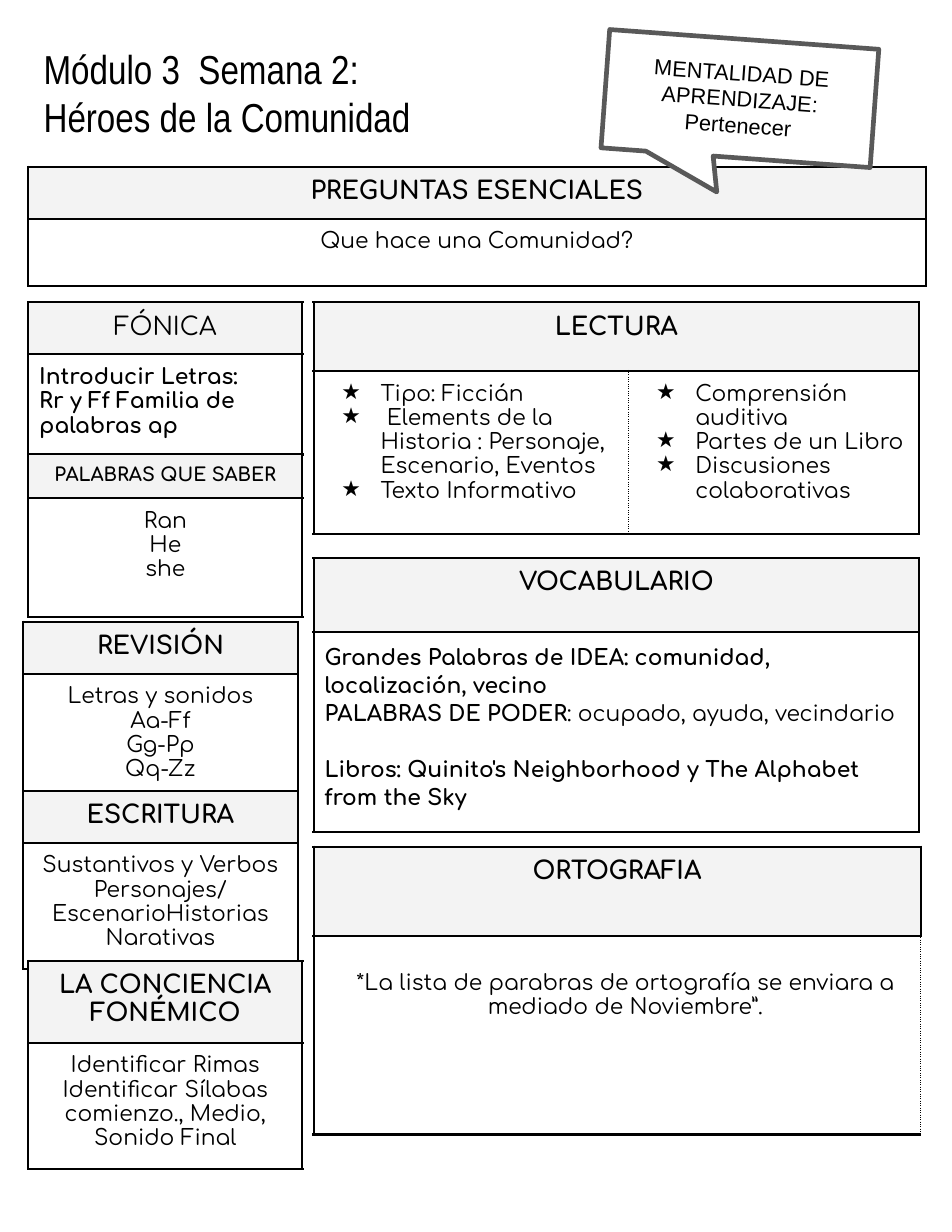
from lxml.etree import SubElement
from pptx import Presentation
from pptx.dml.color import RGBColor
from pptx.enum.shapes import MSO_SHAPE
from pptx.enum.text import MSO_ANCHOR, PP_ALIGN
from pptx.oxml.ns import qn
from pptx.util import Cm, Pt

COLORS = {"ink": "000000", "header": "F3F3F3", "paper": "FFFFFF", "callout": "595959"}
BODY = {"name": "Comfortaa", "size": Pt(14)}
INSET = Cm(0.25)
MARGINS = {f"margin_{side}": INSET for side in ("left", "right", "top", "bottom")}


def add_text(p, text, **font):
    r = p.add_run()
    r.text = text
    for name, value in font.items():
        setattr(r.font, name, value)
    r.font.color.rgb = RGBColor.from_string(COLORS["ink"])


def set_borders(cell, dotted):
    """Rule all four edges; the edges named in dotted ("L", "R") are thin dots."""
    tcPr = cell._tc.get_or_add_tcPr()
    for i, edge in enumerate("LRTB"):
        dots = edge in dotted
        ln = SubElement(tcPr, qn(f"a:ln{edge}"), w=str(Pt(0.75 if dots else 1.5)))
        fill = SubElement(ln, qn("a:solidFill"))
        SubElement(fill, qn("a:srgbClr"), val=COLORS["ink"])
        SubElement(ln, qn("a:prstDash"), val="sysDot" if dots else "solid")
        tcPr.insert(i, ln)


prs = Presentation()
prs.slide_width, prs.slide_height = Cm(21.59), Cm(27.94)
s = prs.slides.add_slide(prs.slide_layouts[6])

# Title
tf = s.shapes.add_textbox(Cm(0.74), Cm(1.6), Cm(10.9), Cm(1.85)).text_frame
for name, value in {**MARGINS, "word_wrap": True, "vertical_anchor": MSO_ANCHOR.BOTTOM}.items():
    setattr(tf, name, value)
p = tf.paragraphs[0]
add_text(p, "Módulo 3  Semana 2:", name="Arial Narrow", size=Pt(26))
p.add_line_break()
add_text(p, "Héroes de la Comunidad", name="Arial Narrow", size=Pt(26))

# Each table: header, (left, top), column widths, row heights in cm, then the
# body cells, each a list of paragraphs, and the options that differ
LEFT, RIGHT = 0.64, 7.11
NARROW, HALVES = [6.22], [3.2, 3.02]
tables = [
    ("FÓNICA", (LEFT, 6.86), NARROW, [1.14, 2.16],
     [["Introducir Letras:", "Rr y Ff Familia de palabras ap"]],
     {"header_bold": False, "bold": True, "align": PP_ALIGN.LEFT}),
    ("PREGUNTAS ESENCIALES", (LEFT, 3.78), [4.45, 15.9], [1.14] + [0.38] * 4,
     [["Que hace una Comunidad?"]], {}),
    ("PALABRAS QUE SABER", (LEFT, 10.29), HALVES, [0.99, 1.3, 1.4],
     [["Ran", "He", "she"]], {"header_size": 12}),
    ("VOCABULARIO", (RIGHT, 12.65), [3.26, 10.48], [1.68] + [0.61] * 3 + [2.49],
     [["Grandes Palabras de IDEA: comunidad, localización, vecino",
       "PALABRAS DE PODER|: ocupado, ayuda, vecindario",
       "Libros: Quinito's Neighborhood y The Alphabet from the Sky"]],
     {"bold": True, "align": PP_ALIGN.LEFT, "spacing": 1.15, "gap_before": 2}),
    ("LECTURA", (RIGHT, 6.86), [7.14, 6.6], [1.55] + [0.46] * 3 + [2.31],
     [["Tipo: Ficcián", " Elements de la Historia : Personaje, Escenario, Eventos",
       "Texto Informativo"],
      ["Comprensión auditiva", "Partes de un Libro", "Discusiones colaborativas"]],
     {"align": PP_ALIGN.LEFT, "bullet": "★", "dotted": ["R", "L"]}),
    ("REVISIÓN", (0.53, 14.1), NARROW, [1.14, 2.72],
     [["Letras y sonidos", "Aa-Ff", "Gg-Pp", "Qq-Zz"]], {}),
    ("ESCRITURA", (0.53, 17.93), HALVES, [1.14, 1.35, 1.36],
     [["Sustantivos y Verbos", "Personajes/EscenarioHistorias Narativas"]], {}),
    ("LA CONCIENCIA FONÉMICO", (LEFT, 21.79), NARROW, [1.75, 2.72],
     [["Identificar Rimas", "Identificar Sílabas", "comienzo., Medio, Sonido Final"]], {}),
    ("ORTOGRAFIA", (RIGHT, 19.2), [13.77], [2.03, 4.5],
     [["*La lista de parabras de ortografía se enviara a mediado de Noviembre”."]],
     {"dotted": ["R"], "indent": 0.38, "margin_top": 0.8}),
]

for header, (x, y), widths, heights, bodies, opts in tables:
    frame = s.shapes.add_table(len(heights), len(widths), Cm(x), Cm(y),
                               Cm(sum(widths)), Cm(sum(heights)))
    table = frame.table
    table.first_row = table.horz_banding = False
    for column, width in zip(table.columns, widths):
        column.width = Cm(width)
    for row, height in zip(table.rows, heights):
        row.height = Cm(height)
    dotted = opts.get("dotted", [])
    for i, row in enumerate(table.rows):
        for j, cell in enumerate(row.cells):
            for name, value in MARGINS.items():
                setattr(cell, name, value)
            if i == 0:
                cell.fill.solid()
                cell.fill.fore_color.rgb = RGBColor.from_string(COLORS["header"])
            else:
                cell.fill.background()
            set_borders(cell, dotted[j] if i and dotted else "")

    last_row, last_col = len(heights) - 1, len(widths) - 1
    head = table.cell(0, 0)
    if last_col:
        head.merge(table.cell(0, last_col))
    p = head.text_frame.paragraphs[0]
    p.alignment = PP_ALIGN.CENTER
    add_text(p, header, name="Comfortaa", size=Pt(opts.get("header_size", 16)),
             bold=opts.get("header_bold", True))

    for j, paragraphs in enumerate(bodies):
        cell = table.cell(1, j)
        end_col = j if len(bodies) > 1 else last_col
        if (last_row, end_col) != (1, j):
            cell.merge(table.cell(last_row, end_col))
        if "margin_top" in opts:
            cell.margin_top = Cm(opts["margin_top"])
        tf = cell.text_frame
        for k, text in enumerate(paragraphs):
            p = tf.add_paragraph() if k else tf.paragraphs[0]
            pPr = p._p.get_or_add_pPr()
            if "bullet" in opts:
                pPr.set("marL", str(Cm(1.27)))
                pPr.set("indent", str(Cm(-0.89)))
                SubElement(SubElement(pPr, qn("a:buClr")), qn("a:srgbClr"), val=COLORS["ink"])
                SubElement(pPr, qn("a:buChar"), char=opts["bullet"])
            elif "indent" in opts:
                pPr.set("marL", str(Cm(opts["indent"])))
            p.alignment = opts.get("align", PP_ALIGN.CENTER)
            p.line_spacing = opts.get("spacing")
            if k and k == opts.get("gap_before"):
                p.space_before = Pt(18)
            # Text after a bar is set in regular weight
            for n, part in enumerate(text.split("|")):
                add_text(p, part, **BODY, bold=opts.get("bold", False) and n == 0)

# Speech bubble
bubble = s.shapes.add_shape(MSO_SHAPE.ROUNDED_RECTANGULAR_CALLOUT,
                            Cm(13.72), Cm(0.89), Cm(6.12), Cm(2.69))
bubble.rotation = 4.2
bubble.shadow.inherit = False
for i, value in enumerate((-0.06, 0.8, 0)):
    bubble.adjustments[i] = value
bubble.fill.solid()
bubble.fill.fore_color.rgb = RGBColor.from_string(COLORS["paper"])
bubble.line.color.rgb = RGBColor.from_string(COLORS["callout"])
bubble.line.width = Pt(3)
tf = bubble.text_frame
for name, value in {**MARGINS, "word_wrap": True, "vertical_anchor": MSO_ANCHOR.MIDDLE}.items():
    setattr(tf, name, value)
p = tf.paragraphs[0]
p.alignment = PP_ALIGN.CENTER
add_text(p, "MENTALIDAD DE APRENDIZAJE: Pertenecer", name="Arial", size=Pt(14))

prs.save("out.pptx")
